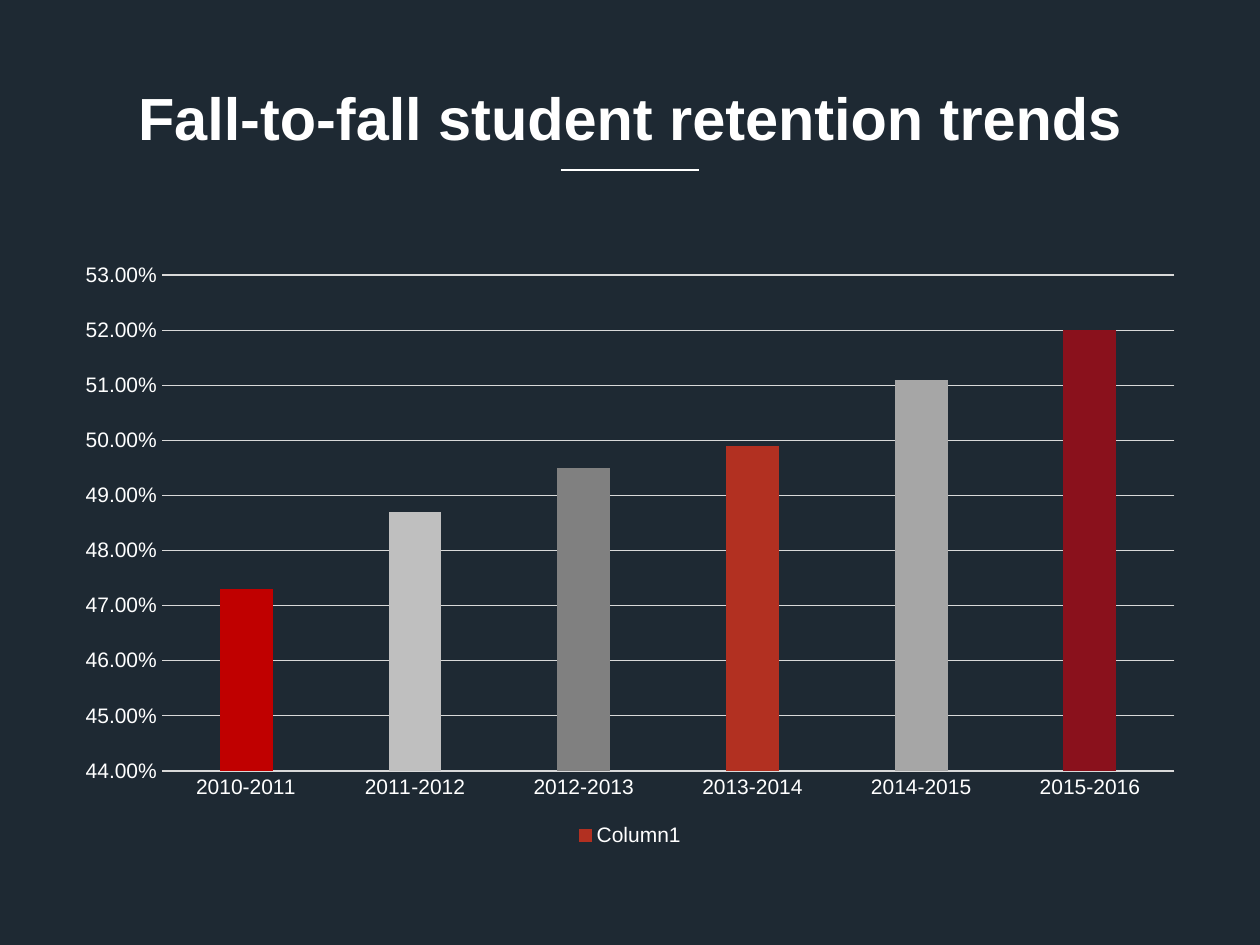
from lxml import etree
from pptx import Presentation
from pptx.chart.data import CategoryChartData
from pptx.dml.color import RGBColor
from pptx.enum.chart import XL_CHART_TYPE, XL_LEGEND_POSITION, XL_TICK_MARK
from pptx.enum.shapes import MSO_CONNECTOR
from pptx.enum.text import MSO_ANCHOR, PP_ALIGN
from pptx.oxml.ns import qn
from pptx.util import Inches, Pt

COLUMN = XL_CHART_TYPE.COLUMN_CLUSTERED
BOTTOM = XL_LEGEND_POSITION.BOTTOM
NO_TICK = XL_TICK_MARK.NONE
STRAIGHT = MSO_CONNECTOR.STRAIGHT
MIDDLE = MSO_ANCHOR.MIDDLE
CENTER = PP_ALIGN.CENTER

FONT = "Arial"
WHITE, GRID, ACCENT = "FFFFFF", "D9D9D9", "B23021"
RETENTION = [
    ("2010-2011", 0.473, "C00000"),
    ("2011-2012", 0.487, "BFBFBF"),
    ("2012-2013", 0.495, "808080"),
    ("2013-2014", 0.499, ACCENT),
    ("2014-2015", 0.511, "A6A6A6"),
    ("2015-2016", 0.52, "8A111C"),
]


def rgb(value):
    return RGBColor.from_string(value)


def style_font(font, size, bold=False):
    font.name = FONT
    font.size = Pt(size)
    font.bold = bold
    font.color.rgb = rgb(WHITE)


def style_line(line, color):
    line.color.rgb = rgb(color)
    line.width = Pt(0.75)


def add_title(slide, text, x, y, w, h):
    sp = slide.shapes.add_textbox(x, y, w, h)
    tf = sp.text_frame
    tf.word_wrap = True
    tf.vertical_anchor = MIDDLE
    p = tf.paragraphs[0]
    p.text = text
    p.alignment = CENTER
    style_font(p.font, 34, bold=True)

    rule_w, rule_y = Inches(1.1), y + int(h * 0.84)
    left = x + (w - rule_w) // 2
    rule = slide.shapes.add_connector(STRAIGHT, left, rule_y, left + rule_w, rule_y)
    style_line(rule.line, WHITE)
    etree.SubElement(rule._element.spPr, qn("a:effectLst"))


def add_retention_chart(slide, x, y, w, h):
    years, rates, colors = zip(*RETENTION)
    data = CategoryChartData(number_format="0.00%")
    data.categories = years
    data.add_series("Column1", rates)
    chart = slide.shapes.add_chart(COLUMN, x, y, w, h, data).chart
    style_font(chart.font, 12)
    chart.has_title = False
    chart.has_legend = True
    chart.legend.position = BOTTOM
    chart.legend.include_in_layout = False
    style_font(chart.legend.font, 12)

    plot = chart.plots[0]
    plot.gap_width, plot.overlap = 219, -27
    plot.vary_by_categories = False
    series = plot.series[0]
    series.format.fill.solid()
    series.format.fill.fore_color.rgb = rgb(ACCENT)
    for i, color in enumerate(colors):
        fill = series.points[i].format.fill
        fill.solid()
        fill.fore_color.rgb = rgb(color)

    cat, val = chart.category_axis, chart.value_axis
    for axis in (cat, val):
        axis.major_tick_mark = axis.minor_tick_mark = NO_TICK
        style_font(axis.tick_labels.font, 12)
    style_line(cat.format.line, GRID)
    val.format.line.fill.background()
    val.minimum_scale, val.maximum_scale, val.major_unit = 0.44, 0.53, 0.01
    val.tick_labels.number_format = "0.00%"
    val.tick_labels.number_format_is_linked = False
    val.has_major_gridlines = True
    style_line(val.major_gridlines.format.line, GRID)


def main():
    prs = Presentation()
    prs.slide_width, prs.slide_height = Inches(10), Inches(7.5)
    slide = prs.slides.add_slide(prs.slide_layouts[6])
    slide.background.fill.solid()
    slide.background.fill.fore_color.rgb = rgb("1E2933")
    margin = int(prs.slide_width * 0.05)
    width = prs.slide_width - 2 * margin
    add_title(slide, "Fall-to-fall student retention trends",
              margin, Inches(0.3), width, Inches(1.25))
    add_retention_chart(slide, margin, Inches(2), width, Inches(4.76))
    prs.save("out.pptx")


if __name__ == "__main__":
    main()
